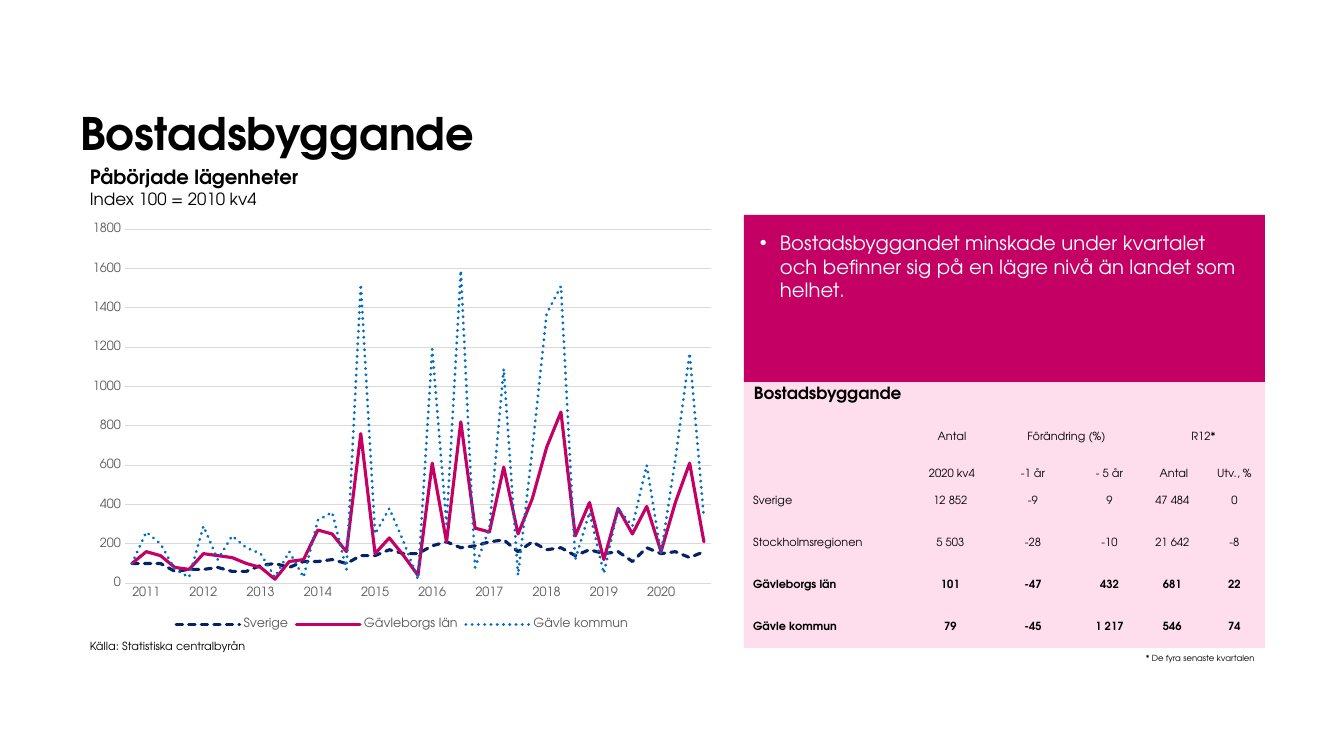
from lxml import etree
from pptx import Presentation
from pptx.chart.data import CategoryChartData
from pptx.dml.color import RGBColor
from pptx.enum.chart import XL_CHART_TYPE as ChartType, XL_LEGEND_POSITION as LegendPosition
from pptx.enum.chart import XL_TICK_MARK as TickMark
from pptx.enum.dml import MSO_LINE as Dash
from pptx.enum.shapes import MSO_SHAPE as Shape
from pptx.enum.text import MSO_ANCHOR as Anchor, PP_ALIGN as Align
from pptx.oxml.ns import qn
from pptx.util import Emu, Pt

FONT = "TeX Gyre Adventor"
COLORS = {
    "black": "000000", "white": "FFFFFF", "grey": "595959", "grid": "D9D9D9",
    "magenta": "C40064", "pink": "FEDEED", "navy": "052364", "blue": "006EBF",
}
NO_GRID_STYLE = "{2D5ABB26-0587-4C30-8999-92F81FD0307C}"
YEARS = range(2011, 2021)
QUARTERS = 41
SERIES = [
    ("Sverige", "navy", Dash.SQUARE_DOT,
     [100, 100, 100, 60, 70, 70, 80, 60, 60, 90, 100, 80, 110, 110, 120, 100, 140, 140, 170, 150, 150,
      190, 210, 180, 190, 210, 220, 160, 210, 170, 180, 140, 170, 150, 160, 110, 180, 150, 160, 130, 160]),
    ("Gävleborgs län", "magenta", Dash.SOLID,
     [100, 160, 140, 80, 70, 150, 140, 130, 100, 80, 20, 110, 120, 270, 250, 160, 760, 150, 230, 140, 40,
      610, 210, 820, 280, 260, 590, 250, 430, 690, 870, 240, 410, 120, 380, 250, 390, 160, 410, 610, 210]),
    ("Gävle kommun", "blue", Dash.ROUND_DOT,
     [100, 260, 200, 70, 30, 290, 120, 240, 180, 150, 30, 160, 30, 320, 360, 70, 1520, 250, 380, 210, 20,
      1190, 300, 1590, 80, 280, 1090, 40, 680, 1370, 1510, 120, 360, 50, 380, 290, 600, 150, 630, 1170, 330]),
]
COLUMN_WIDTHS = [170, 76, 86, 67, 62, 59]
ROW_HEIGHTS = [35, 37, 42, 42, 42, 42]
ROWS = [
    ["", "Antal", "Förändring (%)", "", "R12*", ""],
    ["", "2020 kv4", "-1 år", "- 5 år", "Antal", "Utv., %"],
    ["Sverige", "12 852 ", "-9", "9", "47 484 ", "0"],
    ["Stockholmsregionen", "5 503 ", "-28", "-10", "21 642 ", "-8"],
    ["Gävleborgs län", "101 ", "-47", "432", "681 ", "22"],
    ["Gävle kommun", "79 ", "-45", "1 217", "546 ", "74"],
]
HEADER_ROWS = 2
FIRST_BOLD_ROW = 4


def px(count):
    return Emu(round(count * 914400 / 100.8))


def color(name):
    return RGBColor.from_string(COLORS[name])


def style_font(font, size, tone="black", bold=False):
    font.name = FONT
    font.size = Pt(size)
    font.bold = bold
    font.color.rgb = color(tone)


def set_indent(para, left, first=0):
    properties = para._p.get_or_add_pPr()
    properties.set("marL", str(px(left)))
    properties.set("indent", str(px(first)))
    return properties


def add_text(slide, box, lines, wrap=False, anchor=Anchor.TOP, inset=True):
    frame = slide.shapes.add_textbox(*map(px, box)).text_frame
    frame.word_wrap = wrap
    frame.vertical_anchor = anchor
    if not inset:
        frame.margin_left = frame.margin_top = frame.margin_right = frame.margin_bottom = 0
    frame.text = "\n".join(text for text, size, bold in lines)
    for para, (text, size, bold) in zip(frame.paragraphs, lines):
        style_font(para.runs[0].font, size, bold=bold)
    return frame


def add_panel(slide, box, fill):
    panel = slide.shapes.add_shape(Shape.RECTANGLE, *map(px, box))
    panel.shadow.inherit = False
    panel.fill.solid()
    panel.fill.fore_color.rgb = color(fill)
    panel.line.fill.background()
    return panel


def add_heading(slide, box):
    left, top, width, height = box
    title = add_text(slide, (left, top, width, height), [("Bostadsbyggande", 32, True)],
                     wrap=True, anchor=Anchor.BOTTOM, inset=False)
    title.paragraphs[0].line_spacing = 0.9
    add_text(slide, (left, top + height, 462, 54),
             [("Påbörjade lägenheter", 14, True), ("Index 100 = 2010 kv4", 12, False)], wrap=True)


def add_housing_chart(slide, box):
    left, top, width, height = box
    data = CategoryChartData()
    labels = [""] * QUARTERS
    labels[1::4] = map(str, YEARS)
    data.categories = labels
    for name, tone, dash, values in SERIES:
        data.add_series(name, values)
    chart = slide.shapes.add_chart(ChartType.LINE, *map(px, box), data).chart
    style_font(chart.font, 10)
    chart.has_title = False
    chart.has_legend = True
    chart.legend.position = LegendPosition.BOTTOM
    chart.legend.include_in_layout = False
    style_font(chart.legend.font, 9, "grey")

    plot = chart.plots[0]
    plot.vary_by_categories = False
    for series, (name, tone, dash, values) in zip(plot.series, SERIES):
        series.smooth = False
        line = series.format.line
        line.width = Pt(2.25)
        line.color.rgb = color(tone)
        line.dash_style = dash
        series._element.xpath("c:spPr/a:ln")[0].set("cap", "rnd")

    for axis in (chart.category_axis, chart.value_axis):
        axis.major_tick_mark = axis.minor_tick_mark = TickMark.NONE
        style_font(axis.tick_labels.font, 9, "grey")
    years, index = chart.category_axis, chart.value_axis
    index.minimum_scale, index.maximum_scale, index.major_unit = 0, 1800, 200
    index.format.line.fill.background()
    for line in (years.format.line, index.major_gridlines.format.line):
        line.color.rgb = color("grid")
        line.width = Pt(0.75)
    skip = etree.Element(qn("c:tickLblSkip"), val="1")
    years._element.find(qn("c:noMultiLvlLbl")).addprevious(skip)

    add_text(slide, (left, top + height, 182, 24), [("Källa: Statistiska centralbyrån", 8, False)])


def add_message(slide, box):
    frame = add_panel(slide, box, "magenta").text_frame
    frame.word_wrap = True
    frame.vertical_anchor = Anchor.TOP
    frame.margin_left = frame.margin_top = frame.margin_right = frame.margin_bottom = px(16)
    frame.text = "Bostadsbyggandet minskade under kvartalet och befinner sig på en lägre nivå än landet som helhet."
    para = frame.paragraphs[0]
    para.alignment = Align.LEFT
    properties = set_indent(para, 20, -20)
    etree.SubElement(properties, qn("a:buFont"), typeface="Arial")
    etree.SubElement(properties, qn("a:buChar"), char="•")
    style_font(para.runs[0].font, 14, "white")


def add_housing_table(slide, box):
    left, top, width, height = box
    add_panel(slide, box, "pink")
    add_text(slide, (left, top, 170, 30), [("Bostadsbyggande", 12, True)])
    table_box = (left, top + 30, sum(COLUMN_WIDTHS), sum(ROW_HEIGHTS))
    table = slide.shapes.add_table(len(ROWS), len(COLUMN_WIDTHS), *map(px, table_box)).table
    table.first_row = table.horz_banding = False
    table._tbl.tblPr.find(qn("a:tableStyleId")).text = NO_GRID_STYLE
    for column, size in zip(table.columns, COLUMN_WIDTHS):
        column.width = px(size)
    for row, size in zip(table.rows, ROW_HEIGHTS):
        row.height = px(size)
    for first in (2, 4):
        table.cell(0, first).merge(table.cell(0, first + 1))
    for row_number, texts in enumerate(ROWS):
        for column_number, text in enumerate(texts):
            cell = table.cell(row_number, column_number)
            cell.fill.background()
            cell.margin_left = cell.margin_top = cell.margin_right = px(1)
            cell.margin_bottom = 0
            cell.vertical_anchor = Anchor.BOTTOM if row_number < HEADER_ROWS else Anchor.MIDDLE
            if not text:
                continue
            cell.text_frame.text = text
            para = cell.text_frame.paragraphs[0]
            if column_number:
                para.alignment = Align.CENTER
            else:
                set_indent(para, 8)
            style_font(para.runs[0].font, 8, bold=row_number >= FIRST_BOLD_ROW)
    add_text(slide, (left + width - 129, top + height, 130, 20), [("* De fyra senaste kvartalen", 6, False)])


def main():
    deck = Presentation()
    deck.slide_width, deck.slide_height = px(1344), px(756)
    slide = deck.slides.add_slide(deck.slide_layouts[6])
    add_heading(slide, (80, 37, 929, 123))
    add_housing_chart(slide, (80, 215, 644, 419))
    add_housing_table(slide, (744, 378, 521, 270))
    add_message(slide, (744, 215, 521, 167))
    deck.save("out.pptx")


if __name__ == "__main__":
    main()
